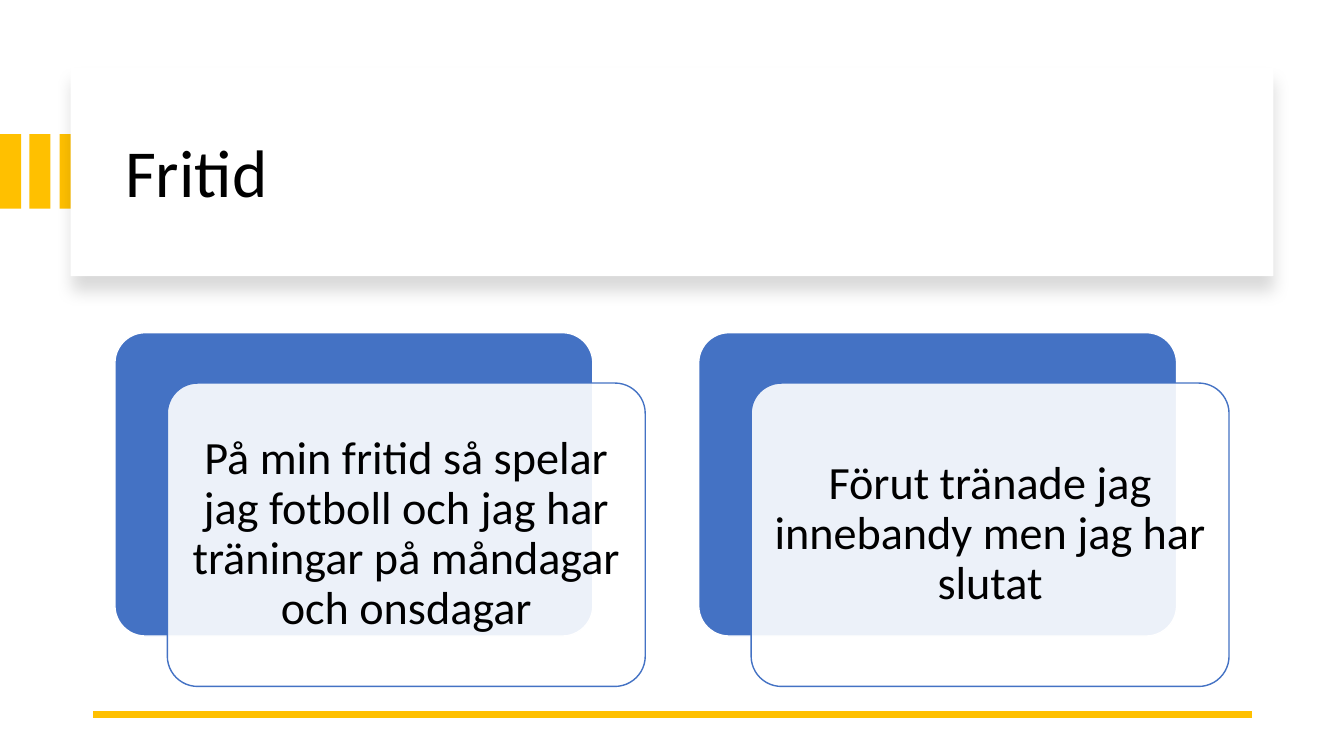
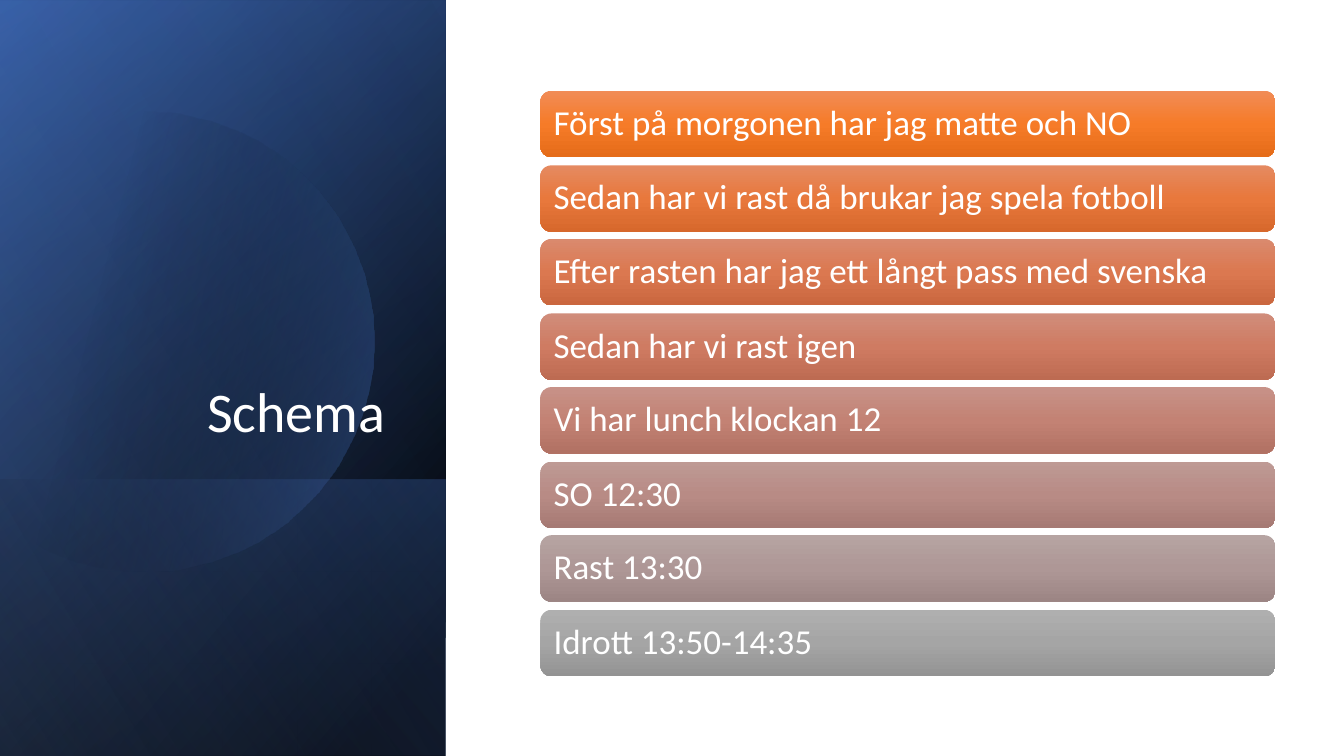
from dataclasses import dataclass
from math import acos, cos, sin

from lxml import etree
from pptx import Presentation
from pptx.dml.color import RGBColor
from pptx.enum.shapes import MSO_CONNECTOR, MSO_SHAPE
from pptx.enum.text import MSO_ANCHOR, MSO_AUTO_SIZE, PP_ALIGN
from pptx.oxml.ns import qn
from pptx.util import Pt

PX = 9144  # 100 px to the inch
RECT, ROUND = MSO_SHAPE.RECTANGLE, MSO_SHAPE.ROUNDED_RECTANGLE
LINE = MSO_CONNECTOR.STRAIGHT
MIDDLE, BOTTOM = MSO_ANCHOR.MIDDLE, MSO_ANCHOR.BOTTOM
LEFT, CENTER, RIGHT = PP_ALIGN.LEFT, PP_ALIGN.CENTER, PP_ALIGN.RIGHT


@dataclass(frozen=True)
class Theme:
    font: str = "Calibri"
    black: str = "000000"
    white: str = "FFFFFF"
    gold: str = "FFC000"
    blue: str = "4472C4"
    navy: str = "2F5597"
    sky: str = "8FAADC"
    title: int = 48
    side: int = 40
    card: int = 33
    row: int = 25


T = Theme()


def block(slide, kind, frame, fill, edge=None):
    """Add a shape; fill is a colour or (angle, (stop, colour, opacity)...)."""
    if kind is None:
        pen = slide.shapes.build_freeform(*frame[0], scale=PX)
        pen.add_line_segments(frame[1:], close=True)
        shape = pen.convert_to_shape()
    else:
        shape = slide.shapes.add_shape(kind, *[n * PX for n in frame])
    shape.shadow.inherit = False
    if isinstance(fill, str):
        shape.fill.solid()
        shape.fill.fore_color.rgb = RGBColor.from_string(fill)
    else:
        shape.fill.gradient()
        grad = shape.element.spPr.find(qn("a:gradFill"))
        stops = grad.find(qn("a:gsLst"))
        stops.clear()
        for pos, color, alpha in fill[1:]:
            stop = etree.SubElement(stops, qn("a:gs"), pos=str(pos * 1000))
            tone = etree.SubElement(stop, qn("a:srgbClr"), val=color)
            etree.SubElement(tone, qn("a:alpha"), val=str(alpha * 1000))
        grad.find(qn("a:lin")).set("ang", str(fill[0] * 60000))
    if edge:
        shape.line.color.rgb = RGBColor.from_string(edge)
        shape.line.width = Pt(1)
    else:
        shape.line.fill.background()
    return shape


def write(shape, text, size, color, align, anchor=MIDDLE):
    frame = shape.text_frame
    frame.auto_size = MSO_AUTO_SIZE.NONE
    frame.word_wrap = True
    frame.vertical_anchor = anchor
    frame.text = text
    para = frame.paragraphs[0]
    para.alignment = align
    para.line_spacing = 0.9
    para.font.name = T.font
    para.font.size = Pt(size)
    para.font.color.rgb = RGBColor.from_string(color)
    return frame


deck = Presentation()
deck.slide_width, deck.slide_height = 1333 * PX, 750 * PX
layout = deck.slide_layouts[5]
hobby, plan = [deck.slides.add_slide(layout) for _ in range(2)]

# Slide 1: heading panel, rule and two cards
for left in (0, 29, 59):
    block(hobby, RECT, (left, 133, 21, 74), T.gold)

panel = block(hobby, RECT, (70, 67, 1193, 207), T.white)
glow = etree.SubElement(
    panel.element.spPr.find(qn("a:effectLst")), qn("a:outerShdw"),
    blurRad=str(Pt(11)), dist=str(Pt(10)), dir="5400000",
    algn="t", rotWithShape="0")
shade = etree.SubElement(glow, qn("a:srgbClr"), val=T.black)
etree.SubElement(shade, qn("a:alpha"), val="15000")

rule = hobby.shapes.add_connector(LINE, 1242 * PX, 709 * PX, 92 * PX, 709 * PX)
rule.line.color.rgb = RGBColor.from_string(T.gold)
rule.line.width = Pt(4.5)
etree.SubElement(rule.element.spPr, qn("a:effectLst"))

cards = (
    "På min fritid så spelar jag fotboll och jag har träningar på måndagar och onsdagar",
    "Förut tränade jag innebandy men jag har slutat",
)
for i, text in enumerate(cards):
    left = 114 + 579 * i
    back = block(hobby, ROUND, (left, 330, 474, 301), T.blue, T.white)
    front = block(hobby, ROUND, (left + 52, 380, 474, 301), T.white, T.blue)
    back.adjustments[0] = front.adjustments[0] = 0.1
    tone = front.element.spPr.find(qn("a:solidFill")).find(qn("a:srgbClr"))
    etree.SubElement(tone, qn("a:alpha"), val="90000")
    frame = write(front, text, T.card, T.black, CENTER)
    frame.margin_left = frame.margin_right = 14 * PX
    frame.margin_top = frame.margin_bottom = 14 * PX

# Slide 2: layered side panel, turned a quarter and mirrored
MID, WIDE = 221, 442
angle = acos(-143 / 228)
arc = [(143 + 228 * cos(angle * k / 60), 339 + 228 * sin(angle * k / 60))
       for k in range(-60, 61)]
layers = (
    (750, 375, (50, (8, T.black, 100), (100, T.navy, 100))),
    (750, 376, (30, (0, T.black, 0), (99, T.blue, 46))),
    (274, 613, (130, (2, T.blue, 29), (100, T.black, 30))),
    (0, 0, (14, (29, T.black, 0), (100, T.blue, 43))),
    (750, 375, (120, (0, T.black, 0), (99, T.sky, 11))),
)
for tall, mid, fill in layers:
    if not tall:
        block(plan, None, arc, fill)
        continue
    spot = (MID - tall // 2, mid - WIDE // 2, tall, WIDE)
    layer = block(plan, RECT, spot, fill)
    layer.rotation = 90
    layer.element.spPr.find(qn("a:xfrm")).set("flipH", "1")

rows = (
    ("Först på morgonen har jag matte och NO", "F18C57", "F67B28", "E56C19"),
    ("Sedan har vi rast då brukar jag spela fotboll", "E58A61", "E8783C", "D7682C"),
    ("Efter rasten har jag ett långt pass med svenska", "DA8A6E", "DB7850", "CA673F"),
    ("Sedan har vi rast igen", "D08D7B", "CF7B62", "BD6B52"),
    ("Vi har lunch klockan 12", "C79288", "C38274", "B17163"),
    ("SO 12:30", "BE9A95", "B88B85", "A67A74"),
    ("Rast 13:30", "B6A4A2", "AE9796", "9C8584"),
    ("Idrott 13:50-14:35", "AFAFAF", "A5A5A5", "939393"),
)
for i, (text, *tones) in enumerate(rows):
    top = 90 + round(515 * i / (len(rows) - 1))
    stops = [(50 * k, tone, 100) for k, tone in enumerate(tones)]
    row = block(plan, ROUND, (536, top, 729, 66), (90, *stops))
    frame = write(row, text, T.row, T.white, LEFT)
    frame.margin_left = frame.margin_right = 10 * PX

# Titles, in front of the panels
titles = (
    (hobby, "Fritid", (114, 89, 1113, 170), T.title, T.black, LEFT, MIDDLE, 10),
    (plan, "Schema", (64, 184, 341, 262), T.side, T.white, RIGHT, BOTTOM, 23),
)
for slide, text, spot, size, color, align, anchor, inset in titles:
    title = slide.shapes.title
    title.left, title.top, title.width, title.height = [n * PX for n in spot]
    write(title, text, size, color, align, anchor).margin_right = inset * PX
    title.element.getparent().append(title.element)

deck.save("out.pptx")
